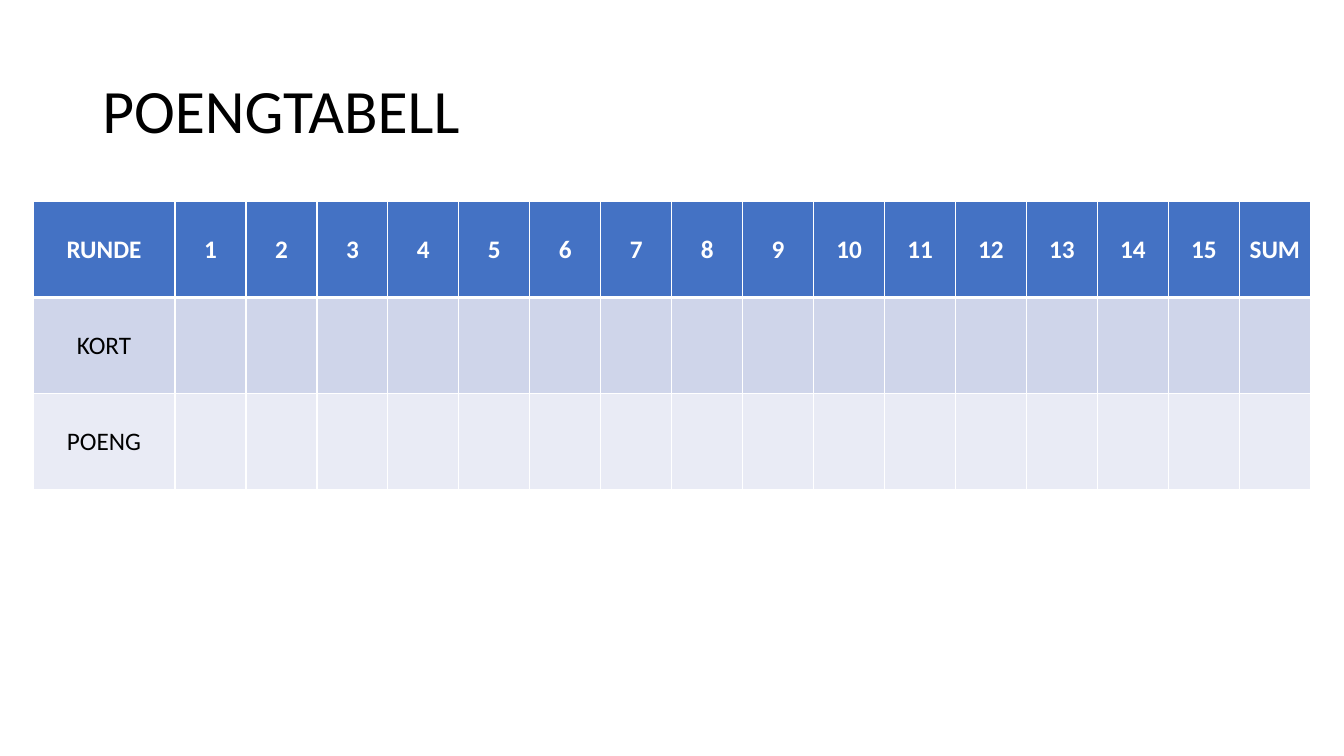
from lxml.etree import SubElement
from pptx import Presentation
from pptx.dml.color import RGBColor
from pptx.enum.text import MSO_ANCHOR, PP_ALIGN
from pptx.oxml.ns import qn
from pptx.util import Pt

TITLE = "POENGTABELL"
HEAD = ["RUNDE", *map(str, range(1, 16)), "SUM"]
ROWS = [
    (HEAD, "4472C4", "FFFFFF", True),
    (["KORT"], "CFD5EA", "000000", False),
    (["POENG"], "E9EBF5", "000000", False),
]
LEFT, TOP, UNIT, HIGH = 23.6, 144, 50.7, 68.6


def paint(fill, tone):
    fill.solid()
    fill.fore_color.rgb = RGBColor.from_string(tone)


def write(frame, text, size=18, tone="000000", bold=False,
          align=PP_ALIGN.CENTER, space=1.0):
    para = frame.paragraphs[0]
    para.alignment = align
    para.line_spacing = space
    run = para.add_run()
    run.text = text
    font = run.font
    font.name, font.size, font.bold = "Calibri", Pt(size), bold
    paint(font.fill, tone)


def edge(cell, side, width):
    props = cell._tc.get_or_add_tcPr()
    line = SubElement(props, qn("a:ln" + side), w=str(Pt(width)))
    fill = SubElement(line, qn("a:solidFill"))
    SubElement(fill, qn("a:srgbClr"), val="FFFFFF")


deck = Presentation()
deck.slide_width, deck.slide_height = Pt(960), Pt(540)
slide = deck.slides.add_slide(deck.slide_layouts[6])

box = slide.shapes.add_textbox(Pt(66), Pt(28.8), Pt(828), Pt(104.4))
frame = box.text_frame
frame.word_wrap = True
frame.vertical_anchor = MSO_ANCHOR.MIDDLE
write(frame, TITLE, size=44, align=PP_ALIGN.LEFT, space=0.9)

wide = len(HEAD)
grid = slide.shapes.add_table(
    len(ROWS), wide, Pt(LEFT), Pt(TOP),
    Pt(UNIT * (wide + 1)), Pt(HIGH * len(ROWS))).table
for i, col in enumerate(grid.columns):
    col.width = Pt(UNIT * (1 if i else 2))

for r, (words, back, tone, bold) in enumerate(ROWS):
    grid.rows[r].height = Pt(HIGH)
    for c in range(wide):
        cell = grid.cell(r, c)
        cell.vertical_anchor = MSO_ANCHOR.MIDDLE
        cell.margin_left = cell.margin_right = Pt(3.6)
        for side in "LRTB":
            thick = (r, side) in ((0, "B"), (1, "T"))
            edge(cell, side, 3 if thick else 1)
        paint(cell.fill, back)
        if c < len(words):
            write(cell.text_frame, words[c], tone=tone, bold=bold)

deck.save("out.pptx")
